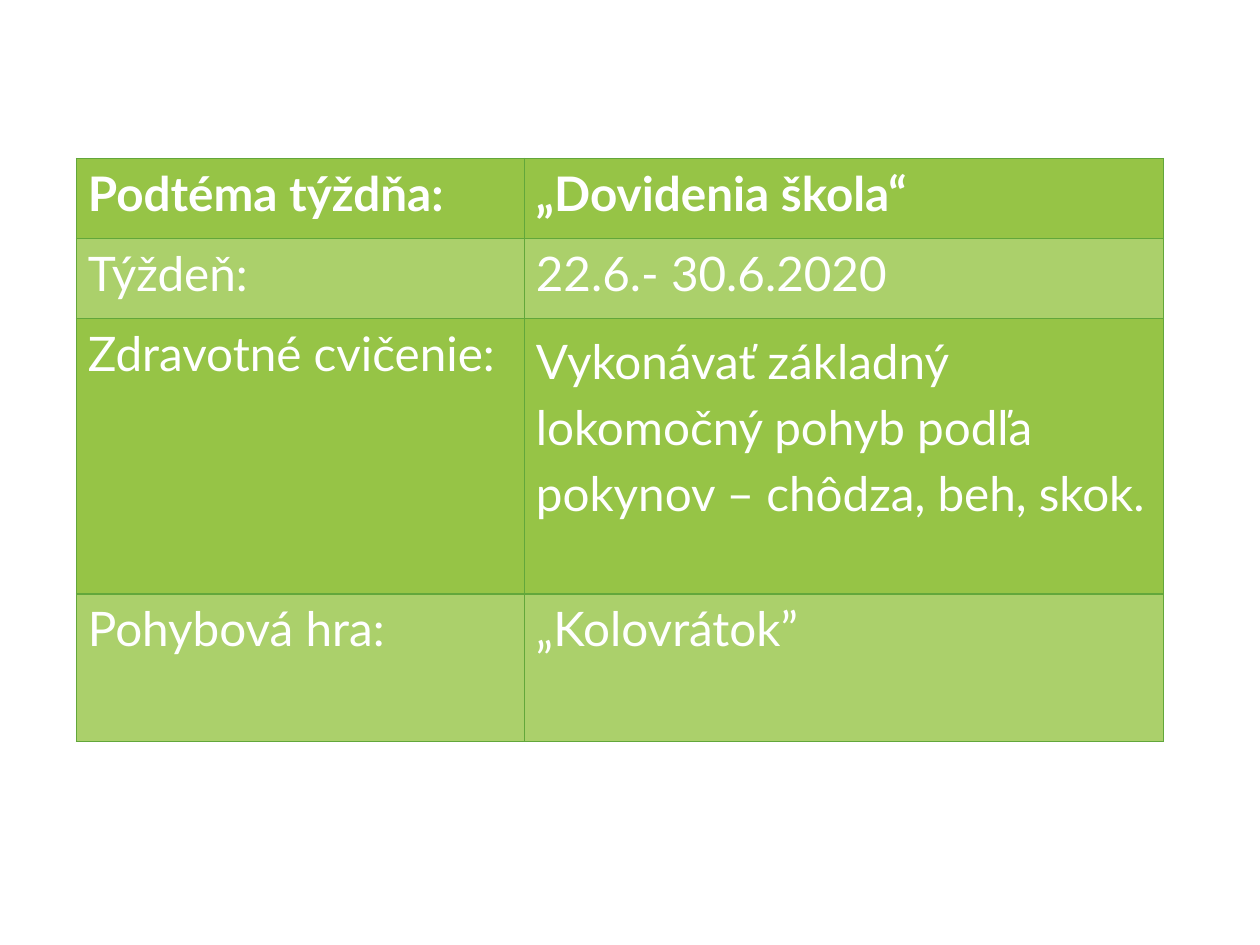
from lxml import etree
from pptx import Presentation
from pptx.dml.color import RGBColor
from pptx.oxml.ns import qn
from pptx.util import Pt

DARK, LIGHT, EDGE, WHITE = "96C446", "ABD06B", "62A73B", "FFFFFF"
COLS = [282.24, 402.48]
ROWS = [
    (50.4, "Podtéma týždňa:", "„Dovidenia škola“"),
    (50.4, "Týždeň:", "22.6.- 30.6.2020"),
    (173.52, "Zdravotné cvičenie:",
     "Vykonávať základný lokomočný pohyb podľa pokynov – chôdza, beh, skok."),
    (92.88, "Pohybová hra:", "„Kolovrátok”"),
]


def color(code):
    return RGBColor.from_string(code)


def write(cell, text, fill, bold=False, space=None):
    props = cell._tc.get_or_add_tcPr()
    for side in ("lnL", "lnR", "lnT", "lnB"):
        line = etree.SubElement(props, qn("a:" + side), w=str(Pt(0.96)))
        solid = etree.SubElement(line, qn("a:solidFill"))
        etree.SubElement(solid, qn("a:srgbClr"), val=EDGE)
    cell.fill.solid()
    cell.fill.fore_color.rgb = color(fill)
    para = cell.text_frame.paragraphs[0]
    if space:
        para.line_spacing = space
    run = para.add_run()
    run.text = text
    run.font.name = "Lato"
    run.font.size = Pt(30)
    run.font.bold = bold
    run.font.color.rgb = color(WHITE)


deck = Presentation()
deck.slide_width = Pt(793.75)
deck.slide_height = Pt(595.25)
slide = deck.slides.add_slide(deck.slide_layouts[6])

high = sum(row[0] for row in ROWS)
frame = slide.shapes.add_table(
    len(ROWS), len(COLS), Pt(48.2), Pt(99.9), Pt(sum(COLS)), Pt(high))
table = frame.table
for col, wide in zip(table.columns, COLS):
    col.width = Pt(wide)

for i, (tall, label, value) in enumerate(ROWS):
    table.rows[i].height = Pt(tall)
    fill = LIGHT if i % 2 else DARK
    write(table.cell(i, 0), label, fill, bold=i == 0)
    write(table.cell(i, 1), value, fill, bold=i == 0,
          space=1.15 if i == 2 else None)

deck.save("out.pptx")
